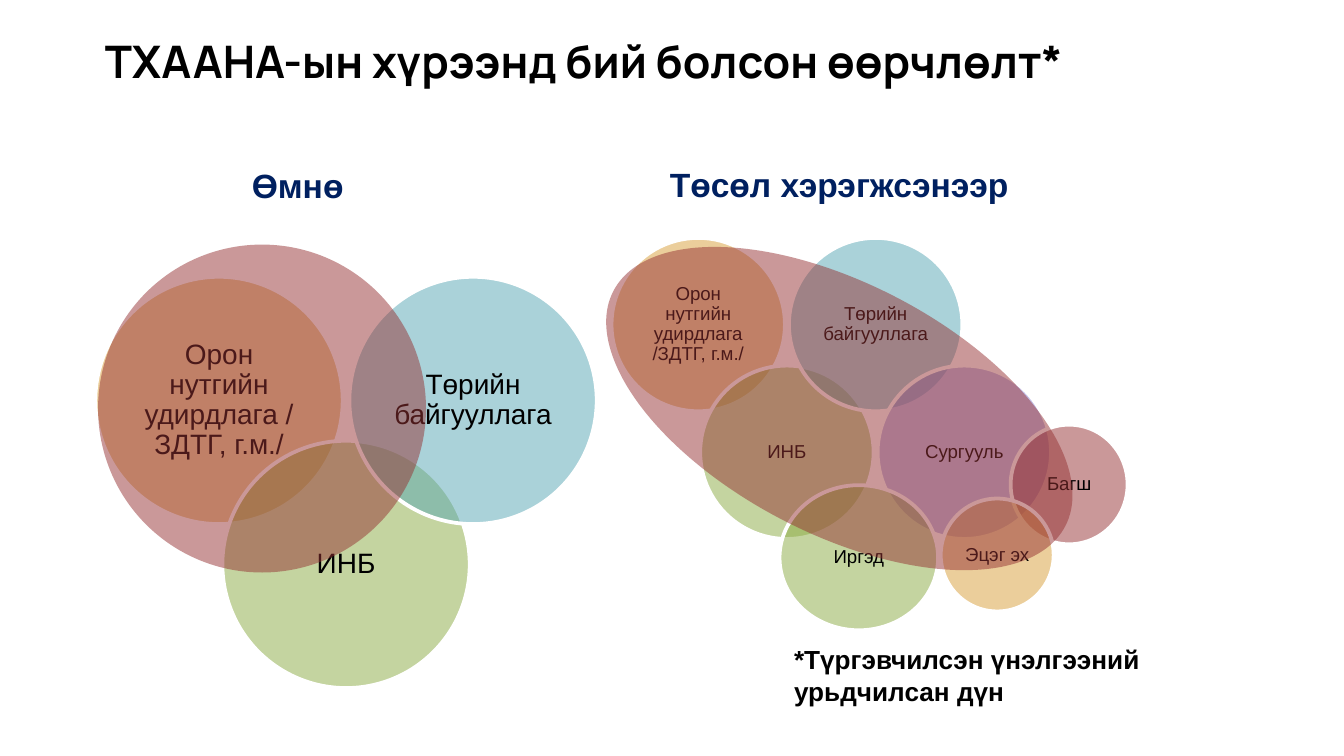
from lxml import etree
from pptx import Presentation
from pptx.dml.color import RGBColor
from pptx.enum import shapes, text
from pptx.oxml.ns import qn
from pptx.util import Inches, Pt

COLORS = {"gold": "D89F39", "green": "8BAB42", "teal": "57A7B5", "violet": "8B81D2",
          "red": "963334", "navy": "002060", "black": "000000", "white": "FFFFFF"}
LOCAL = "Орон нутгийн удирдлага /ЗДТГ, г.м./"
STATE = "Төрийн байгууллага"
NGO = "ИНБ"
LABEL_SHARE = 0.5 ** 0.5  # side of the rectangle inscribed in an ellipse


def rgb(name):
    return RGBColor.from_string(COLORS[name])


def write(frame, words, size, color="black", bold=False, font="Arial", align=None):
    frame.text = words
    frame.word_wrap = True
    paragraph = frame.paragraphs[0]
    paragraph.alignment = align
    style = paragraph.runs[0].font
    style.name, style.size, style.bold = font, Pt(size), bold
    style.color.rgb = rgb(color)
    return paragraph


def set_margins(frame, inches):
    frame.margin_left = frame.margin_right = Inches(inches)
    frame.margin_top = frame.margin_bottom = Inches(inches)


def add_ellipse(parent, box, color, outlined=True):
    """Half-transparent ellipse, with a white outline if asked for."""
    ellipse = parent.add_shape(shapes.MSO_SHAPE.OVAL, *map(Inches, box))
    ellipse.shadow.inherit = False
    ellipse.fill.solid()
    ellipse.fill.fore_color.rgb = rgb(color)
    fill_color = ellipse.fill._xPr.find(qn("a:solidFill"))[0]
    etree.SubElement(fill_color, qn("a:alpha")).set("val", "50000")
    if outlined:
        ellipse.line.color.rgb = rgb("white")
        ellipse.line.width = Pt(2)
    else:
        ellipse.line.fill.background()
    return ellipse


def add_text(parent, box, words, size, **style):
    textbox = parent.add_textbox(*map(Inches, box))
    return textbox.text_frame, write(textbox.text_frame, words, size, **style)


def add_circles(slide, left, top, circles, size, margin):
    """Group of labelled circles, placed relative to left and top."""
    group = slide.shapes.add_group_shape().shapes
    inset = (1 - LABEL_SHARE) / 2
    for dx, dy, width, height, color, words in circles:
        x, y = left + dx, top + dy
        add_ellipse(group, (x, y, width, height), color)
        label_box = (x + inset * width, y + inset * height,
                     width * LABEL_SHARE, height * LABEL_SHARE)
        frame, paragraph = add_text(group, label_box, words, size,
                                    align=text.PP_ALIGN.CENTER)
        frame.vertical_anchor = text.MSO_ANCHOR.MIDDLE
        set_margins(frame, margin)
        paragraph.line_spacing = 0.9


def add_heading(slide, box, words):
    add_text(slide.shapes, box, words, 18, color="navy", bold=True,
             align=text.PP_ALIGN.CENTER)


def add_before(slide, left, top):
    side, span = 1.84, 1.89
    circles = [(0, 0, side, side, "gold", LOCAL),
               (span / 2, 1.22, side, side, "green", NGO),
               (span, 0, side, side, "teal", STATE)]
    add_circles(slide, left, top, circles, 15, 0.06)
    add_ellipse(slide.shapes, (left + 0.02, top - 0.24, 2.44, 2.44), "red", outlined=False)
    add_heading(slide, (left + 0.81, top - 0.88, 1.39, 0.4), "Өмнө")


def add_after(slide, left, top):
    side, step, drop = 1.29, 0.66, 0.95
    zigzag = [("gold", LOCAL), ("green", NGO), ("teal", STATE), ("violet", "Сургууль")]
    circles = [(i * step, i % 2 * drop, side, side, *part) for i, part in enumerate(zigzag)]
    circles += [(2.97, 1.39, 0.87, 0.89, "red", "Багш"),
                (2.45, 1.94, 0.84, 0.84, "gold", "Эцэг эх"),
                (1.25, 1.84, 1.18, 1.08, "green", "Иргэд")]
    add_circles(slide, left, top, circles, 10, 0.04)
    reach = add_ellipse(slide.shapes, (left - 0.2, top + 0.34, 3.79, 1.86), "red",
                        outlined=False)
    reach.rotation = 27.5
    add_heading(slide, (left + 0.28, top - 0.6, 2.83, 0.4), "Төсөл хэрэгжсэнээр")


def place_title(slide, box):
    title = slide.shapes.title
    title.left, title.top, title.width, title.height = map(Inches, box)
    frame = title.text_frame
    write(frame, "ТХААНА-ын хүрээнд бий болсон өөрчлөлт*", 24, bold=True,
          font="Manrope", align=text.PP_ALIGN.LEFT)
    frame.vertical_anchor = text.MSO_ANCHOR.MIDDLE
    frame.auto_size = text.MSO_AUTO_SIZE.NONE
    set_margins(frame, 0.1)


def main():
    deck = Presentation()
    deck.slide_width = Inches(10)
    deck.slide_height = deck.slide_width * 9 // 16
    slide = deck.slides.add_slide(deck.slide_layouts[5])
    add_before(slide, 0.71, 2.06)
    add_after(slide, 4.55, 1.77)
    add_text(slide.shapes, (5.81, 4.74, 3.7, 0.57),
             "*Түргэвчилсэн үнэлгээний урьдчилсан дүн", 14, bold=True)
    place_title(slide, (0.68, 0.14, 7.78, 0.62))
    deck.save("out.pptx")


if __name__ == "__main__":
    main()
